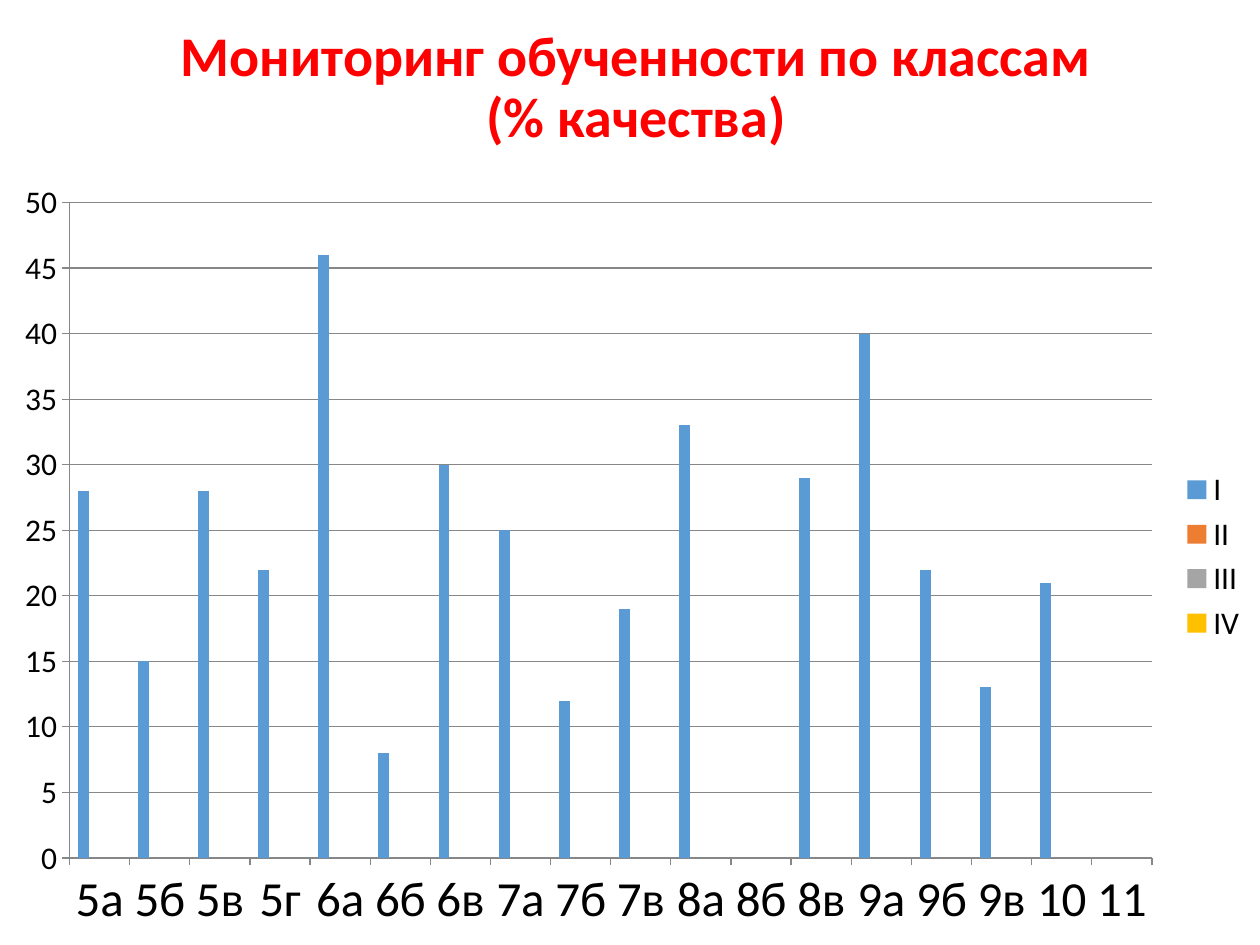
from dataclasses import dataclass

from pptx import Presentation
from pptx.chart.data import CategoryChartData
from pptx.dml.color import RGBColor
from pptx.enum import chart as chart_enum, text
from pptx.util import Pt


@dataclass(frozen=True)
class Theme:
    font: str = "Calibri"
    title_color: str = "FF0000"
    text_color: str = "000000"
    line_color: str = "878787"
    series_colors: tuple = ("5B9BD5", "ED7D31", "A5A5A5", "FFC000")
    title_size: int = 32
    label_size: int = 18
    category_size: int = 28


THEME = Theme()
TITLE = "Мониторинг обученности по классам\n(% качества)"
QUARTERS = ("I", "II", "III", "IV")
QUALITY_BY_CLASS = {
    "5а": 28, "5б": 15, "5в": 28, "5г": 22,
    "6а": 46, "6б": 8, "6в": 30,
    "7а": 25, "7б": 12, "7в": 19,
    "8а": 33, "8б": None, "8в": 29,
    "9а": 40, "9б": 22, "9в": 13,
    "10": 21, "11": None,
}


def set_attributes(target, values):
    for name, value in values.items():
        setattr(target, name, value)


def format_font(font, size, color, bold=False):
    set_attributes(font, {"name": THEME.font, "size": Pt(size), "bold": bold})
    font.color.rgb = RGBColor.from_string(color)


def format_line(line):
    line.color.rgb = RGBColor.from_string(THEME.line_color)
    line.width = Pt(0.75)


def add_title(slide):
    title = slide.shapes.title
    set_attributes(title, {"left": Pt(39.6), "top": Pt(16.5),
                           "width": Pt(648), "height": Pt(68.5)})
    set_attributes(title.text_frame, {"word_wrap": True,
                                      "auto_size": text.MSO_AUTO_SIZE.NONE,
                                      "vertical_anchor": text.MSO_ANCHOR.MIDDLE})
    paragraph = title.text_frame.paragraphs[0]
    paragraph.text = TITLE
    set_attributes(paragraph, {"alignment": text.PP_ALIGN.CENTER, "line_spacing": 0.9})
    for run in paragraph.runs:
        format_font(run.font, THEME.title_size, THEME.title_color, bold=True)


def format_axis(axis, size):
    set_attributes(axis, {"major_tick_mark": chart_enum.XL_TICK_MARK.OUTSIDE,
                          "minor_tick_mark": chart_enum.XL_TICK_MARK.NONE})
    format_font(axis.tick_labels.font, size, THEME.text_color)
    format_line(axis.format.line)


def add_quality_chart(slide):
    data = CategoryChartData()
    data.categories = list(QUALITY_BY_CLASS)
    first, *later = QUARTERS
    data.add_series(first, QUALITY_BY_CLASS.values())
    for quarter in later:  # no results yet
        data.add_series(quarter, [None] * len(QUALITY_BY_CLASS))

    chart = slide.shapes.add_chart(
        chart_enum.XL_CHART_TYPE.COLUMN_CLUSTERED,
        Pt(0), Pt(96), Pt(720), Pt(444), data).chart
    set_attributes(chart, {"has_title": False, "has_legend": True})
    format_font(chart.font, THEME.label_size, THEME.text_color)
    set_attributes(chart.legend, {"position": chart_enum.XL_LEGEND_POSITION.RIGHT,
                                  "include_in_layout": False})
    format_font(chart.legend.font, THEME.label_size, THEME.text_color)

    format_axis(chart.category_axis, THEME.category_size)
    format_axis(chart.value_axis, THEME.label_size)
    set_attributes(chart.value_axis, {"minimum_scale": 0, "maximum_scale": 50,
                                      "major_unit": 5, "has_major_gridlines": True})
    format_line(chart.value_axis.major_gridlines.format.line)

    plot = chart.plots[0]
    set_attributes(plot, {"gap_width": 150, "overlap": 0, "vary_by_categories": False})
    for series, color in zip(plot.series, THEME.series_colors):
        series.format.fill.solid()
        series.format.fill.fore_color.rgb = RGBColor.from_string(color)


def main():
    presentation = Presentation()
    set_attributes(presentation, {"slide_width": Pt(720), "slide_height": Pt(540)})
    slide = presentation.slides.add_slide(presentation.slide_layouts[5])
    add_title(slide)
    add_quality_chart(slide)
    presentation.save("out.pptx")


if __name__ == "__main__":
    main()
